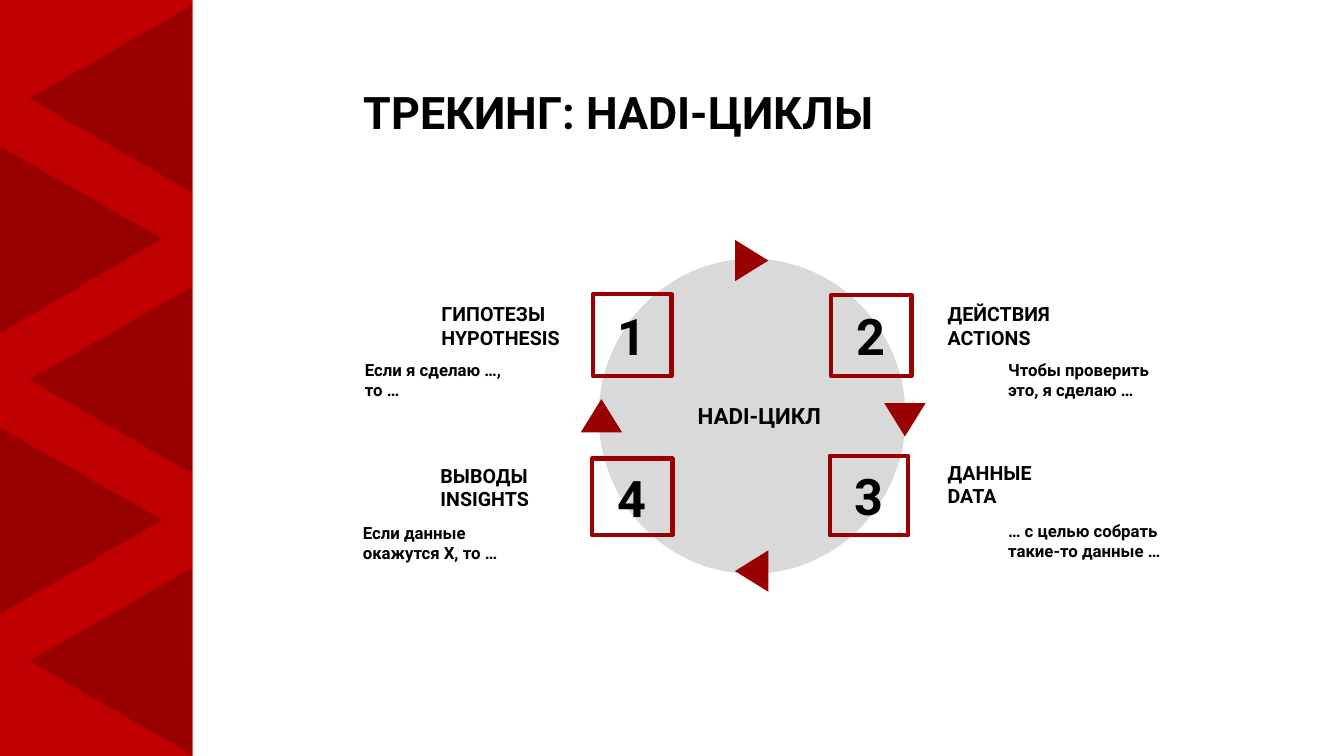
from pptx import Presentation
from pptx.dml.color import RGBColor
from pptx.enum.shapes import MSO_SHAPE as Shape
from pptx.enum.text import MSO_ANCHOR as Anchor, PP_ALIGN as Align
from pptx.util import Inches, Pt

COLORS = {
    "panel": "C00000",
    "accent": "990000",
    "circle": "D9D9D9",
    "white": "FFFFFF",
    "text": "000000",
}
FONT = "Roboto"

# Number, frame box, heading and its place, note and its place
STEPS = [
    ("1", (2.37, 0.5, 0.78, 0.81), "ГИПОТЕЗЫ\nHYPOTHESIS", (0.77, 0.53, 1.91),
     "Если я сделаю …,\nто …", (0.01, 1.1)),
    ("2", (4.73, 0.51, 0.8, 0.8), "ДЕЙСТВИЯ\nACTIONS", (5.79, 0.53, 1.91),
     "Чтобы проверить это, я сделаю …", (6.39, 1.1)),
    ("3", (4.72, 2.1, 0.78, 0.79), "ДАННЫЕ\nDATA", (5.79, 2.1, 1.71),
     "… с целью собрать такие-то данные …", (6.39, 2.7)),
    ("4", (2.36, 2.13, 0.8, 0.76), "ВЫВОДЫ\nINSIGHTS", (0.76, 2.13, 1.71),
     "Если данные окажутся Х, то …", (-0.01, 2.72)),
]


def color(name):
    return RGBColor.from_string(COLORS[name])


def add_figure(page, kind, box, fill=None, line=None, width=1, rotation=0):
    figure = page.shapes.add_shape(kind, *map(Inches, box))
    figure.shadow.inherit = False
    figure.rotation = rotation
    if fill:
        figure.fill.solid()
        figure.fill.fore_color.rgb = color(fill)
    else:
        figure.fill.background()
    if line:
        figure.line.color.rgb = color(line)
        figure.line.width = Pt(width)
    else:
        figure.line.fill.background()
    return figure


def write(holder, text, size, align=Align.LEFT):
    frame = holder.text_frame
    frame.word_wrap = True
    frame.text = text
    for para in frame.paragraphs:
        para.alignment = align
        for span in para.runs:
            span.font.name = FONT
            span.font.size = Pt(size)
            span.font.bold = True
            span.font.color.rgb = color("text")


def add_text(page, box, text, size):
    write(page.shapes.add_textbox(*map(Inches, box)), text, size)


def add_side_panel(page, box):
    left, top, width, height = box
    add_figure(page, Shape.RECTANGLE, box, "panel")
    # Triangles alternate between the right and the left edge
    for index in range(5):
        offset, rotation = ((-0.53, 329.7) if index % 2 else (0.57, 30.1))
        place = (left + offset, top - 0.05 + 1.395 * index, 1.86, 1.6)
        add_figure(page, Shape.ISOSCELES_TRIANGLE, place, "accent", rotation=rotation)


def add_step(page, left, top, step):
    number, frame, heading, heading_at, note, note_at = step
    # Numbered frame
    x, y, width, height = frame
    square = add_figure(page, Shape.RECTANGLE, (left + x, top + y, width, height),
                        line="accent", width=3)
    square.text_frame.vertical_anchor = Anchor.MIDDLE
    write(square, number, 36, Align.CENTER)
    # Heading and note
    x, y, width = heading_at
    add_text(page, (left + x, top + y, width, 0.57), heading, 14)
    x, y = note_at
    add_text(page, (left + x, top + y, 1.91, 0.5), note, 12)


def add_cycle(page, box):
    left, top, width, height = box
    # Circle with its caption
    add_figure(page, Shape.FLOWCHART_CONNECTOR, (left + 2.42, top + 0.14, 3.06, 3.14),
               "circle", "white")
    add_text(page, (left + 3.31, top + 1.52, 1.89, 0.37), "HADI-ЦИКЛ", 16)
    for step in STEPS:
        add_step(page, left, top, step)
    # Arrowheads show the clockwise direction
    for x, y, rotation in [(3.74, 0, 90), (5.26, 1.58, 180),
                           (3.74, 3.08, 270), (2.25, 1.54, 0)]:
        add_figure(page, Shape.ISOSCELES_TRIANGLE, (left + x, top + y, 0.41, 0.33),
                   "accent", rotation=rotation)


def main():
    deck = Presentation()
    deck.slide_width = Inches(13.33)
    deck.slide_height = Inches(7.5)
    page = deck.slides.add_slide(deck.slide_layouts[6])
    add_side_panel(page, (0, 0, 1.91, 7.5))
    add_text(page, (3.51, 0.79, 8.73, 0.64), "ТРЕКИНГ: HADI-ЦИКЛЫ", 32)
    add_cycle(page, (3.51, 2.42, 8.3, 3.41))
    deck.save("out.pptx")


if __name__ == "__main__":
    main()
